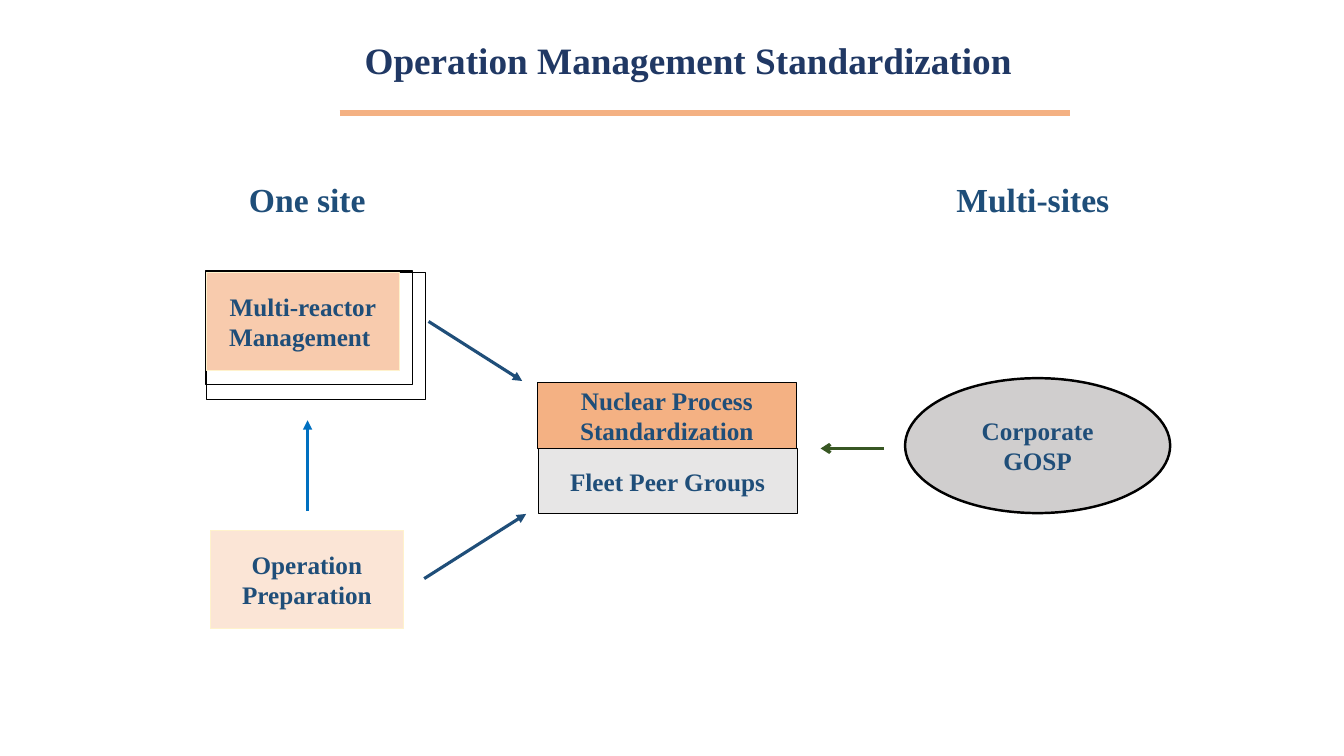
from lxml import etree
from pptx import Presentation
from pptx import util as u
from pptx.dml.color import RGBColor
from pptx.enum import shapes, text
from pptx.oxml.ns import qn

NAVY, BLACK, CREAM = "1F4E79", "000000", "FFF2CC"
RECT, OVAL = shapes.MSO_SHAPE.RECTANGLE, shapes.MSO_SHAPE.OVAL


def paint(part, color):
    """Give a fill or a font a solid colour."""
    if hasattr(part, "solid"):
        part.solid()
        part = part.fore_color
    else:
        part = part.color
    part.rgb = RGBColor.from_string(color)


def write(shape, words, size=18, color=NAVY):
    frame = shape.text_frame
    frame.word_wrap = True
    frame.vertical_anchor = text.MSO_ANCHOR.MIDDLE
    frame.text = words
    for para in frame.paragraphs:
        para.alignment = text.PP_ALIGN.CENTER
        para.font.name = "Times New Roman"
        para.font.size = u.Pt(size)
        para.font.bold = True
        paint(para.font, color)


deck = Presentation()
deck.slide_width, deck.slide_height = u.Cm(33.87), u.Cm(19.05)
slide = deck.slides.add_slide(deck.slide_layouts[6])

# Title and column headings
title = slide.shapes.add_textbox(u.Cm(8.05), u.Cm(0.94), u.Cm(18.62), u.Cm(1.75))
write(title, "Operation Management Standardization", 26.6, "203864")
title.text_frame.vertical_anchor = text.MSO_ANCHOR.TOP
title.text_frame.paragraphs[0].line_spacing = 0.9

for words, left, width in [("One site", 5.84, 3.81), ("Multi-sites", 23.34, 5.38)]:
    head = slide.shapes.add_textbox(u.Cm(left), u.Cm(4.39), u.Cm(width), u.Cm(1.27))
    write(head, words, 24)

# Boxes, from back to front
boxes = [
    (RECT, "Operation Preparation", 5.31, 13.36, 4.85, 2.49, "FBE5D6", CREAM, 0.75),
    (RECT, "Nuclear Process\nStandardization", 13.54, 9.63, 6.53, 1.68, "F4B183", BLACK, 0.75),
    (RECT, "", 5.21, 6.86, 5.51, 3.2, None, BLACK, 0.75),
    (RECT, "", 5.18, 6.83, 5.21, 2.87, None, BLACK, 0.75),
    (RECT, "Multi-reactor\nManagement ", 5.21, 6.86, 4.85, 2.49, "F8CBAD", CREAM, 0.75),
    (RECT, "Fleet Peer Groups", 13.56, 11.3, 6.53, 1.65, "E7E6E6", BLACK, 0.75),
    (OVAL, "Corporate GOSP", 22.81, 9.53, 6.68, 3.4, "D0CECE", BLACK, 1.75),
]
for kind, words, left, top, width, height, fill, edge, weight in boxes:
    box = slide.shapes.add_shape(kind, u.Cm(left), u.Cm(top), u.Cm(width), u.Cm(height))
    box.shadow.inherit = False
    if fill:
        paint(box.fill, fill)
    else:
        box.fill.background()
    paint(box.line.fill, edge)
    box.line.width = u.Pt(weight)
    if words:
        write(box, words)

# Title rule and arrows
lines = [
    (8.56, 2.84, 26.97, 2.84, "F4B183", 4.5, None),
    (10.69, 14.58, 13.26, 12.95, NAVY, 2.25, "triangle"),
    (10.8, 8.1, 13.16, 9.6, NAVY, 2.25, "triangle"),
    (7.75, 12.88, 7.75, 10.59, "0070C0", 2.25, "triangle"),
    (22.28, 11.3, 20.68, 11.3, "385723", 2.25, "arrow"),
]
for x1, y1, x2, y2, color, weight, tip in lines:
    line = slide.shapes.add_connector(
        shapes.MSO_CONNECTOR.STRAIGHT, u.Cm(x1), u.Cm(y1), u.Cm(x2), u.Cm(y2))
    paint(line.line.fill, color)
    line.line.width = u.Pt(weight)
    props = line._element.spPr
    if tip:
        etree.SubElement(props.find(qn("a:ln")), qn("a:tailEnd"), type=tip)
    etree.SubElement(props, qn("a:effectLst"))

deck.save("out.pptx")
